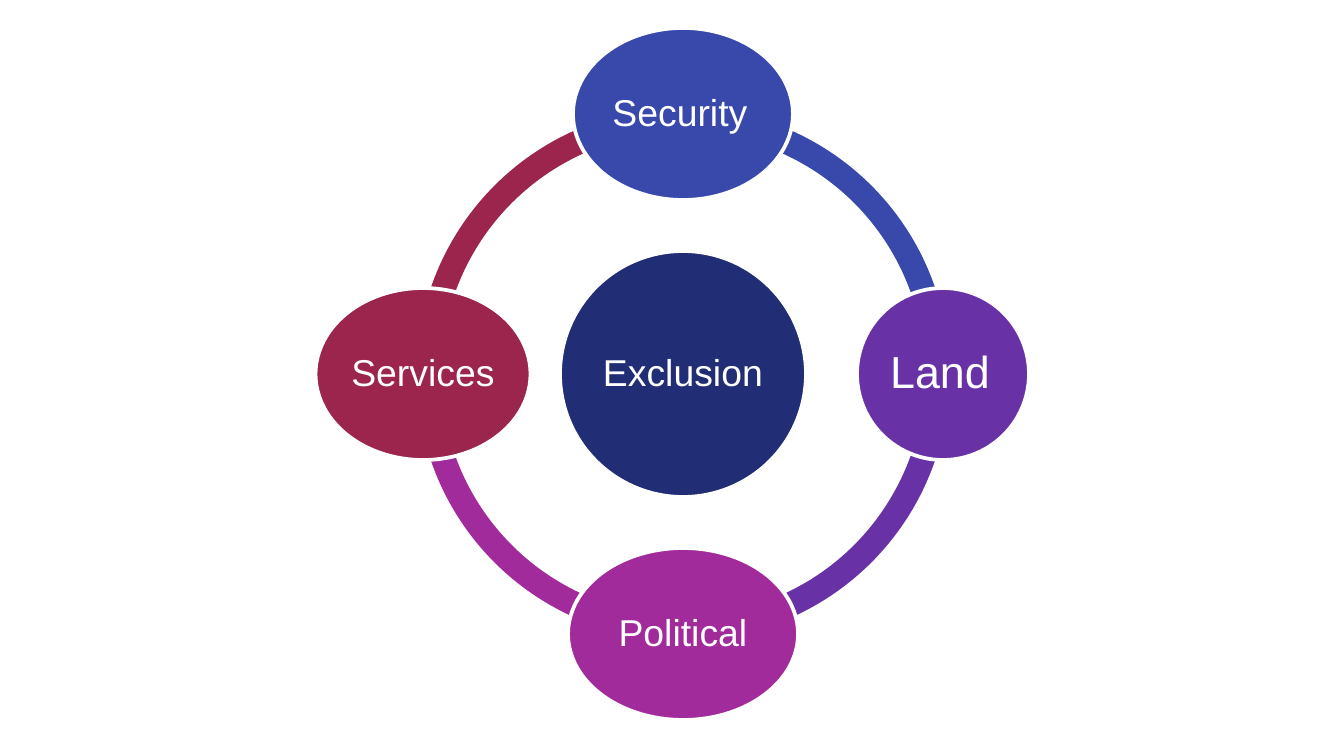
from math import cos, radians, sin

from pptx import Presentation
from pptx.dml.color import RGBColor
from pptx.enum.shapes import MSO_SHAPE
from pptx.enum.text import MSO_ANCHOR, PP_ALIGN
from pptx.util import Emu, Pt

# Content: label, width in px, fill, text size, right text inset in px
HUB = ("Exclusion", 246, "212D74", 20, 4)
FACTORS = [
    ("Security", 220, "3949AB", 20, 10),
    ("Land", 172, "6832A6", 24, 10),
    ("Political", 230, "A12B9A", 20, 4),
    ("Services", 215, "9C254D", 20, 4),
]

# Layout in px
SLIDE_WIDTH, SLIDE_HEIGHT = 1344, 756
CENTER_X, CENTER_Y = 683, 374
RING_DIAMETER = 533
RING_THICKNESS = 0.046
ORBIT = 260
FACTOR_HEIGHT = 172
INSET = 4
STEP = 360 // len(FACTORS)
START = 270


def px(length):
    return Emu(round(length * 914400 / 134.4))


def color(hex_string):
    return RGBColor.from_string(hex_string)


def add_centered(preset, x, y, width, height, fill):
    shape = slide.shapes.add_shape(
        preset, px(x - width / 2), px(y - height / 2), px(width), px(height))
    shape.shadow.inherit = False
    shape.fill.solid()
    shape.fill.fore_color.rgb = color(fill)
    return shape


def add_circle(x, y, height, label, width, fill, size, right_inset):
    circle = add_centered(MSO_SHAPE.OVAL, x, y, width, height, fill)
    circle.line.color.rgb = color("FFFFFF")
    circle.line.width = Pt(2)
    frame = circle.text_frame
    frame.word_wrap = False
    frame.vertical_anchor = MSO_ANCHOR.MIDDLE
    frame.margin_left = frame.margin_top = frame.margin_bottom = px(INSET)
    frame.margin_right = px(right_inset)
    paragraph = frame.paragraphs[0]
    paragraph.text = label
    paragraph.alignment = PP_ALIGN.CENTER
    paragraph.line_spacing = 0.9
    paragraph.font.name = "Arial"
    paragraph.font.size = Pt(size)
    paragraph.font.color.rgb = color("FFFFFF")


presentation = Presentation()
presentation.slide_width = px(SLIDE_WIDTH)
presentation.slide_height = px(SLIDE_HEIGHT)
slide = presentation.slides.add_slide(presentation.slide_layouts[6])

angles = [(START + STEP * i) % 360 for i in range(len(FACTORS))]

# Ring: one arc from each factor to the next, the last one at the back
for (_, _, fill, _, _), angle in reversed(list(zip(FACTORS, angles))):
    arc = add_centered(MSO_SHAPE.BLOCK_ARC, CENTER_X, CENTER_Y,
                       RING_DIAMETER, RING_DIAMETER, fill)
    arc.line.fill.background()
    # Adjustment units: 0.6 per degree
    arc.adjustments[0] = angle * 0.6
    arc.adjustments[1] = (angle + STEP) % 360 * 0.6
    arc.adjustments[2] = RING_THICKNESS

# Hub, then the factors clockwise from the top
add_circle(CENTER_X, CENTER_Y, HUB[1], *HUB)
for factor, angle in zip(FACTORS, angles):
    add_circle(CENTER_X + ORBIT * cos(radians(angle)),
               CENTER_Y + ORBIT * sin(radians(angle)),
               FACTOR_HEIGHT, *factor)

presentation.save("out.pptx")
